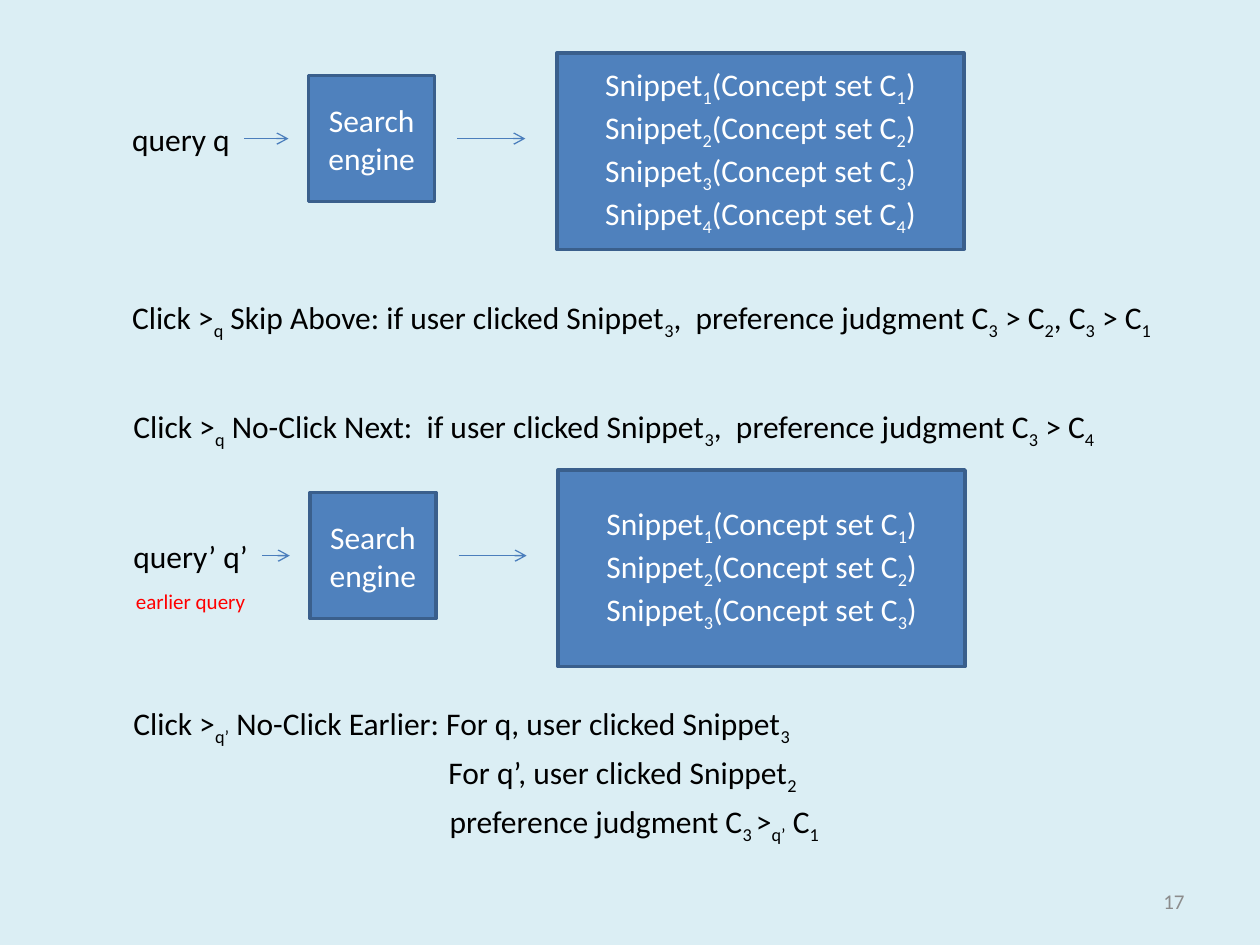
from dataclasses import dataclass

from lxml.etree import SubElement
from pptx import Presentation
from pptx.dml.color import RGBColor
from pptx.enum.shapes import MSO_CONNECTOR, MSO_SHAPE
from pptx.enum.text import MSO_ANCHOR as Anchor, MSO_AUTO_SIZE as AutoSize, PP_ALIGN as Align
from pptx.oxml.ns import qn
from pptx.util import Inches, Pt


@dataclass(frozen=True)
class Theme:
    font: str = "Calibri"
    body: int = 18
    small: int = 12
    background: str = "DBEEF4"
    fill: str = "4F81BD"
    outline: str = "3A5F8C"
    arrow: str = "4B7EBC"
    ink: str = "000000"
    light: str = "FFFFFF"
    accent: str = "FF0000"
    muted: str = "8C8C8C"


@dataclass(frozen=True)
class Area:
    """A rectangle in grid columns and rows."""
    left: float
    top: float
    width: float
    height: float


@dataclass(frozen=True)
class Label:
    area: Area
    text: str
    size: int
    color: str


@dataclass(frozen=True)
class Pipeline:
    """A query that goes through the search engine to a list of snippets."""
    left: float
    axis: float
    query: str
    query_width: float
    snippets: int


THEME = Theme()
CELL = Inches(0.1)  # the slide is a grid of 100 columns and 75 rows
COLUMNS, ROWS = 100, 75
LINE, SMALL_LINE = 4, 3  # heights of one-line boxes

PIPELINES = [
    Pipeline(9.5, 11, "query q", 9.9, 4),
    Pipeline(9.6, 44.1, "query’ q’", 11.2, 3),
]


def body_label(left: float, top: float, width: float, text: str) -> Label:
    return Label(Area(left, top, width, LINE), text, THEME.body, THEME.ink)


LABELS = [
    body_label(9.5, 23.2, 84.6,
               "Click >{q} Skip Above: if user clicked Snippet{3},  "
               "preference judgment C{3} > C{2}, C{3} > C{1}"),
    body_label(9.6, 31.8, 79.1,
               "Click >{q} No-Click Next:  if user clicked Snippet{3},  "
               "preference judgment C{3} > C{4}"),
    body_label(9.6, 55.4, 56.2,
               "Click >{q’} No-Click Earlier: For q, user clicked Snippet{3}"),
    body_label(34.6, 59.3, 30.9, "For q’, user clicked Snippet{2}"),
    body_label(34.7, 63.2, 32.9, "preference judgment C{3 }>{q’} C{1}"),
    Label(Area(9.8, 46.2, 10.8, SMALL_LINE), "earlier query", THEME.small, THEME.accent),
]


def rgb(color: str) -> RGBColor:
    return RGBColor.from_string(color)


def grid(*cells: float) -> list[int]:
    return [round(cell * CELL) for cell in cells]


def bounds(area: Area) -> list[int]:
    return grid(area.left, area.top, area.width, area.height)


def write(para, text: str, size: int, color: str, align=Align.LEFT) -> None:
    """Fill a paragraph; the parts in braces become subscripts."""
    para.alignment = align
    para.font.name = THEME.font
    para.font.size = Pt(size)
    para.font.color.rgb = rgb(color)
    for index, part in enumerate(text.replace("}", "{").split("{")):
        if part:
            span = para.add_run()
            span.text = part
            if index % 2:
                span.font._element.set("baseline", "-25000")


def add_label(page, label: Label) -> None:
    frame = page.shapes.add_textbox(*bounds(label.area)).text_frame
    frame.word_wrap = False
    frame.auto_size = AutoSize.SHAPE_TO_FIT_TEXT
    write(frame.paragraphs[0], label.text, label.size, label.color)


def add_box(page, area: Area, lines: list[str]) -> None:
    box = page.shapes.add_shape(MSO_SHAPE.RECTANGLE, *bounds(area))
    box.shadow.inherit = False
    box.fill.solid()
    box.fill.fore_color.rgb = rgb(THEME.fill)
    box.line.color.rgb = rgb(THEME.outline)
    box.line.width = Pt(2)
    frame = box.text_frame
    frame.word_wrap = True
    frame.vertical_anchor = Anchor.MIDDLE
    for index, line in enumerate(lines):
        para = frame.add_paragraph() if index else frame.paragraphs[0]
        write(para, line, THEME.body, THEME.light, Align.CENTER)


def add_arrow(page, start: float, end: float, row: float) -> None:
    arrow = page.shapes.add_connector(MSO_CONNECTOR.STRAIGHT, *grid(start, row, end, row))
    arrow.line.color.rgb = rgb(THEME.arrow)
    arrow.line.width = Pt(0.75)
    SubElement(arrow.line._get_or_add_ln(), qn("a:tailEnd"), type="arrow")
    SubElement(arrow._element.spPr, qn("a:effectLst"))


def add_pipeline(page, flow: Pipeline) -> None:
    left, axis = flow.left, flow.axis
    add_label(page, body_label(left, axis - LINE / 2, flow.query_width, flow.query))
    add_arrow(page, left + flow.query_width, left + 13.4, axis)
    add_box(page, Area(left + 15, axis - 5, 10, 10), ["Search engine"])
    add_arrow(page, left + 26.8, left + 32.2, axis)
    add_box(page, Area(left + 34.7, axis - 6.8, 32.3, 15.6),
            [f"Snippet{{{n}}}(Concept set C{{{n}}})" for n in range(1, flow.snippets + 1)])


def add_page_number(page, number: int) -> None:
    frame = page.shapes.add_textbox(*bounds(Area(71.7, 69.5, 23.3, LINE))).text_frame
    frame.word_wrap = True
    frame.vertical_anchor = Anchor.MIDDLE
    write(frame.paragraphs[0], str(number), THEME.small, THEME.muted, Align.RIGHT)


def main() -> None:
    deck = Presentation()
    deck.slide_width, deck.slide_height = grid(COLUMNS, ROWS)
    page = deck.slides.add_slide(deck.slide_layouts.get_by_name("Blank"))
    page.background.fill.solid()
    page.background.fill.fore_color.rgb = rgb(THEME.background)
    for flow in PIPELINES:
        add_pipeline(page, flow)
    for label in LABELS:
        add_label(page, label)
    add_page_number(page, 17)
    deck.save("out.pptx")


if __name__ == "__main__":
    main()
